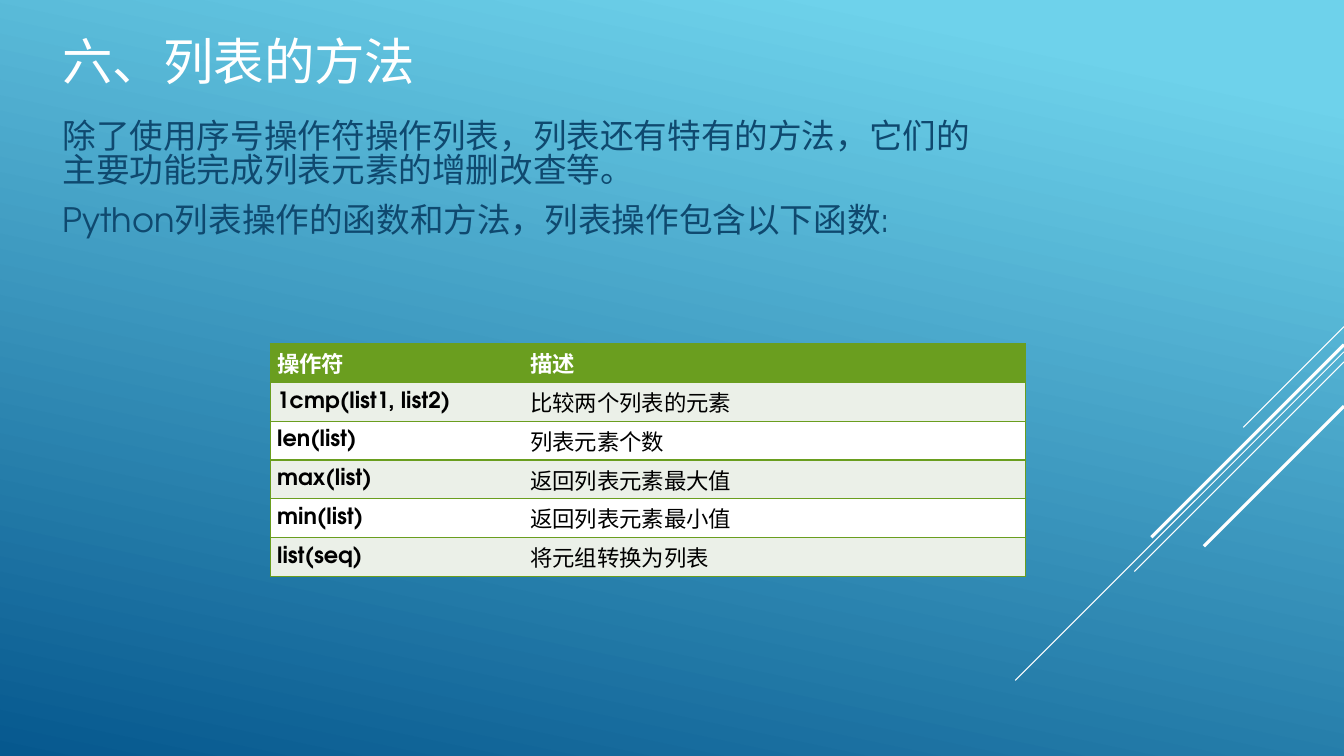
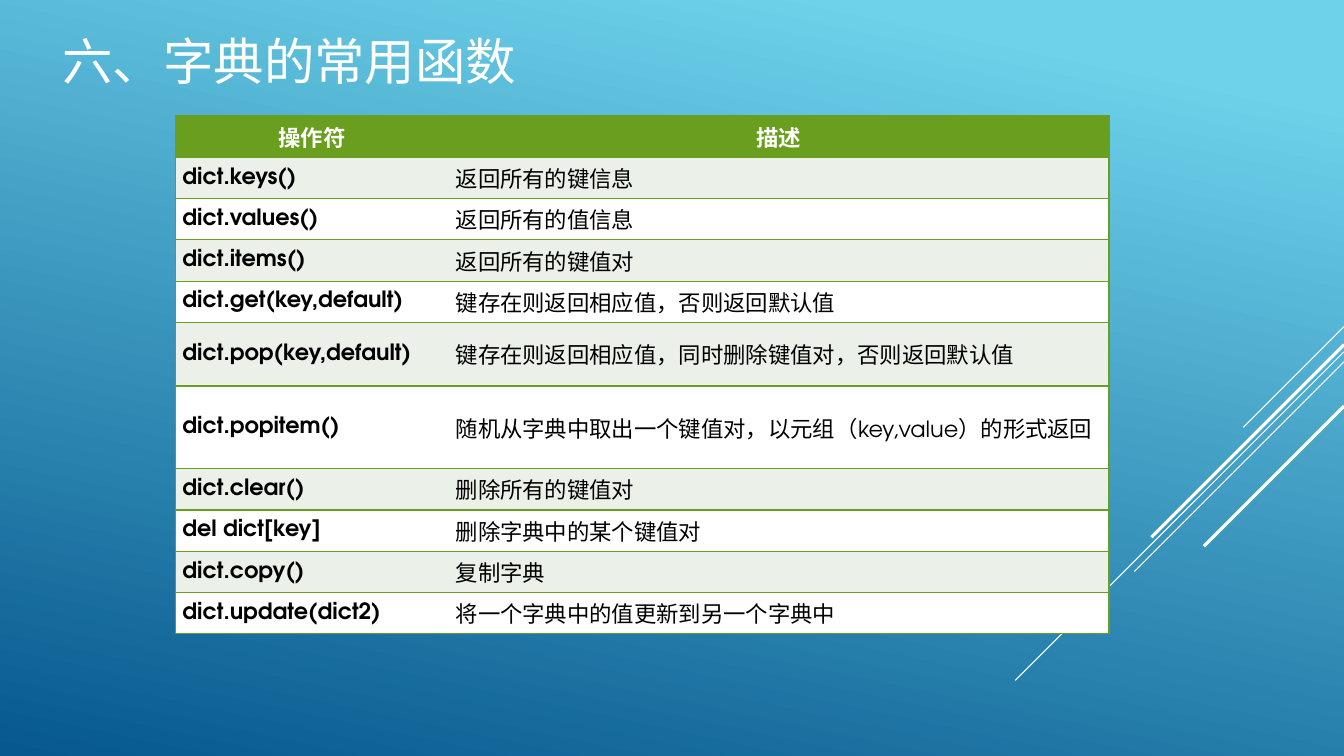
from lxml.etree import SubElement
from pptx import Presentation
from pptx.dml.color import RGBColor
from pptx.enum.shapes import MSO_CONNECTOR
from pptx.enum.text import MSO_ANCHOR, MSO_AUTO_SIZE, PP_ALIGN
from pptx.oxml import parse_xml
from pptx.oxml.ns import nsdecls, qn
from pptx.util import Inches, Pt

FONT = "TeX Gyre Adventor"
WHITE, BLACK, NAVY = "FFFFFF", "000000", "0F496F"
GREEN, PALE_GREEN = "6A9E1F", "EBF0E8"
SKY, DEEP_BLUE = "6ED2EB", "06588E"
SLIDE_WIDTH, SLIDE_HEIGHT = 13.33, 7.5
TITLE_BOX = (0.52, 0.09, 9.33, 0.86)
BODY_BOX = (0.52, 1.15, 9.33, 5.37)
# Each ray starts on the right edge and falls at 45°: top, run, width in points.
RAYS = [(3.24, 1, 0.75), (3.49, 3.26, 0.75), (3.59, 2.08, 0.75),
        (3.42, 1.91, 2.25), (4.03, 1.39, 2.25)]

LIST_INTRO = [
    "除了使用序号操作符操作列表，列表还有特有的方法，它们的主要功能完成列表元素的增删改查等。",
    "Python列表操作的函数和方法，列表操作包含以下函数:",
]
HEADER = ("操作符", "描述")
LIST_FUNCTIONS = [
    ("1cmp(list1, list2)", "比较两个列表的元素"),
    ("len(list)", "列表元素个数"),
    ("max(list)", "返回列表元素最大值"),
    ("min(list)", "返回列表元素最小值"),
    ("list(seq)", "将元组转换为列表"),
]
DICT_FUNCTIONS = [
    ("dict.keys()", "返回所有的键信息"),
    ("dict.values()", "返回所有的值信息"),
    ("dict.items()", "返回所有的键值对"),
    ("dict.get(key,default)", "键存在则返回相应值，否则返回默认值"),
    ("dict.pop(key,default)", "键存在则返回相应值，同时删除键值对，否则返回默认值"),
    ("dict.popitem()", "随机从字典中取出一个键值对，以元组（key,value）的形式返回"),
    ("dict.clear()", "删除所有的键值对"),
    ("del dict[key]", "删除字典中的某个键值对"),
    ("dict.copy()", "复制字典"),
    ("dict.update(dict2)", "将一个字典中的值更新到另一个字典中"),
]


def rgb(color):
    return RGBColor.from_string(color)


def place(shape, box):
    shape.left, shape.top, shape.width, shape.height = map(Inches, box)


def style(paragraph, size, color, alignment, bold=False):
    paragraph.alignment = alignment
    font = paragraph.font
    font.name, font.size, font.bold = FONT, Pt(size), bold
    font.color.rgb = rgb(color)


def format_master(master):
    """Set the background and the title and body boxes shared by all slides."""
    fill = master.background.fill
    fill.gradient()
    fill.gradient_angle = 360 - 102
    for stop, color, position in zip(fill.gradient_stops, (SKY, DEEP_BLUE), (0.1, 1)):
        stop.color.rgb, stop.position = rgb(color), position
    title, body = list(master.placeholders)[:2]
    place(title, TITLE_BOX)
    title.text_frame.vertical_anchor = MSO_ANCHOR.BOTTOM
    place(body, BODY_BOX)
    for placeholder in (title, body):
        placeholder.text_frame.auto_size = MSO_AUTO_SIZE.NONE


def add_rays(slide, master):
    """Draw the rays, then move them to the master so every slide shows them."""
    for top, run, width in RAYS:
        ray = slide.shapes.add_connector(
            MSO_CONNECTOR.STRAIGHT, Inches(SLIDE_WIDTH), Inches(top),
            Inches(SLIDE_WIDTH - run), Inches(top + run))
        ray.line.color.rgb = rgb(WHITE)
        ray.line.width = Pt(width)
        SubElement(ray.element.spPr, qn("a:effectLst"))
        master.shapes.element.append(ray.element)


def add_slide(presentation, layout_name, title):
    layout = presentation.slide_layouts.get_by_name(layout_name)
    slide = presentation.slides.add_slide(layout)
    slide.shapes.title.text = title
    style(slide.shapes.title.text_frame.paragraphs[0], 36, WHITE, PP_ALIGN.LEFT)
    return slide


def fill_body(placeholder, lines):
    placeholder.text = "\n".join(lines)
    for paragraph in placeholder.text_frame.paragraphs:
        style(paragraph, 24, NAVY, PP_ALIGN.LEFT)
        paragraph.line_spacing = 0.85
        paragraph.space_after = Pt(6)
        properties = paragraph._p.get_or_add_pPr()
        properties.set("marL", "0")
        properties.set("indent", "0")
        SubElement(properties, qn("a:buNone")) if properties.find(qn("a:defRPr")) is None \
            else properties.find(qn("a:defRPr")).addprevious(
                parse_xml(f"<a:buNone {nsdecls('a')}/>"))


def set_borders(cell, visible_sides):
    for index, side in enumerate("LRTB"):
        paint = (f'<a:solidFill><a:srgbClr val="{GREEN}"/></a:solidFill>'
                 if side in visible_sides else "<a:noFill/>")
        border = parse_xml(f'<a:ln{side} {nsdecls("a")} w="{Pt(1)}">{paint}</a:ln{side}>')
        cell._tc.get_or_add_tcPr().insert(index, border)


def format_cell(cell, text, fill, color, alignment, bold, visible_sides):
    cell.text = text
    style(cell.text_frame.paragraphs[0], 16, color, alignment, bold)
    cell.vertical_anchor = MSO_ANCHOR.MIDDLE
    cell.margin_left = cell.margin_right = Inches(0.07)
    cell.margin_top = cell.margin_bottom = 0
    cell.fill.solid()
    cell.fill.fore_color.rgb = rgb(fill)
    set_borders(cell, visible_sides)


def add_function_table(slide, left, top, column_widths, row_heights, functions,
                       header_alignment):
    rows = [HEADER, *functions]
    table = slide.shapes.add_table(
        len(rows), len(HEADER), Inches(left), Inches(top),
        Inches(sum(column_widths)), Inches(sum(row_heights))).table
    for column, width in zip(table.columns, column_widths):
        column.width = Inches(width)
    for row_index, (texts, height) in enumerate(zip(rows, row_heights)):
        table.rows[row_index].height = Inches(height)
        is_header = row_index == 0
        fill = GREEN if is_header else (WHITE, PALE_GREEN)[row_index % 2]
        color = WHITE if is_header else BLACK
        alignment = header_alignment if is_header else PP_ALIGN.JUSTIFY
        for column_index, text in enumerate(texts):
            format_cell(table.cell(row_index, column_index), text, fill, color,
                        alignment, bold=is_header or column_index == 0,
                        visible_sides=("LTB", "RTB")[column_index])


def add_list_slide(presentation):
    slide = add_slide(presentation, "Title and Content", "六、列表的方法")
    fill_body(slide.placeholders[1], LIST_INTRO)
    add_function_table(slide, 2.68, 3.41, (2.51, 4.98), [0.385] * 6,
                       LIST_FUNCTIONS, PP_ALIGN.JUSTIFY)
    return slide


def add_dict_slide(presentation):
    slide = add_slide(presentation, "Title Only", "六、字典的常用函数")
    row_heights = [0.41] * 5 + [0.63, 0.82] + [0.41] * 4
    add_function_table(slide, 1.74, 1.15, (2.71, 6.55), row_heights,
                       DICT_FUNCTIONS, PP_ALIGN.CENTER)
    return slide


def main():
    presentation = Presentation()
    presentation.slide_width = Inches(SLIDE_WIDTH)
    presentation.slide_height = Inches(SLIDE_HEIGHT)
    master = presentation.slide_master
    format_master(master)
    add_rays(add_list_slide(presentation), master)
    add_dict_slide(presentation)
    presentation.save("out.pptx")


if __name__ == "__main__":
    main()
